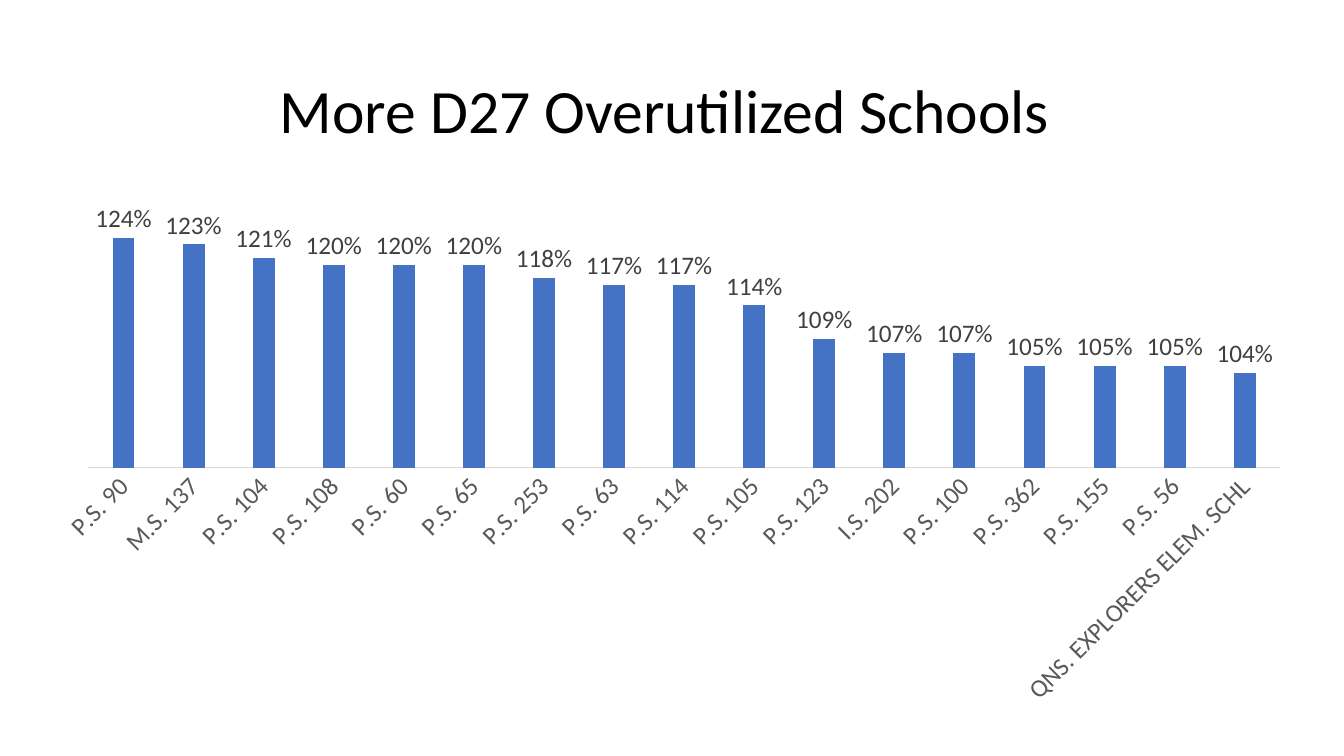
from pptx import Presentation
from pptx.chart.data import CategoryChartData
from pptx.dml.color import RGBColor
from pptx.enum.chart import XL_CHART_TYPE as ChartType
from pptx.enum.chart import XL_LABEL_POSITION as LabelPos
from pptx.enum.chart import XL_TICK_MARK as Tick
from pptx.enum.text import MSO_ANCHOR, PP_ALIGN
from pptx.oxml.ns import qn
from pptx.util import Inches, Pt

FONT = "Calibri"
SLIDE_W, SLIDE_H = 13.33, 7.5
SCHOOLS = [
    ("P.S. 90", 1.24), ("M.S. 137", 1.23), ("P.S. 104", 1.21),
    ("P.S. 108", 1.20), ("P.S. 60", 1.20), ("P.S. 65", 1.20),
    ("P.S. 253", 1.18), ("P.S. 63", 1.17), ("P.S. 114", 1.17),
    ("P.S. 105", 1.14), ("P.S. 123", 1.09), ("I.S. 202", 1.07),
    ("P.S. 100", 1.07), ("P.S. 362", 1.05), ("P.S. 155", 1.05),
    ("P.S. 56", 1.05), ("QNS. EXPLORERS ELEM. SCHL", 1.04),
]


def rgb(value):
    return RGBColor.from_string(value)


def centered_box(top, width, height):
    """Box of the given size, centered across the slide."""
    return [Inches(n) for n in ((SLIDE_W - width) / 2, top, width, height)]


def set_font(font, size, color):
    font.name = FONT
    font.size = Pt(size)
    font.bold = False
    font.color.rgb = rgb(color)


def add_title(slide, box, text):
    title = slide.shapes.title
    title.left, title.top, title.width, title.height = box
    tf = title.text_frame
    tf.vertical_anchor = MSO_ANCHOR.MIDDLE
    p = tf.paragraphs[0]
    p.alignment = PP_ALIGN.CENTER
    p.line_spacing = 0.9
    r = p.add_run()
    r.text = text
    set_font(r.font, 44, "000000")


def add_utilization_chart(slide, box):
    data = CategoryChartData(number_format="0%")
    data.categories = [school for school, _ in SCHOOLS]
    data.add_series("Series 1", [share for _, share in SCHOOLS])
    chart = slide.shapes.add_chart(ChartType.COLUMN_CLUSTERED, *box, data).chart
    chart.has_legend = False
    chart.has_title = False
    set_font(chart.font, 10, "000000")

    values = chart.value_axis
    values.minimum_scale, values.maximum_scale = 0.9, 1.3
    values.has_major_gridlines = False
    values.tick_labels.number_format = "0%"
    values.tick_labels.number_format_is_linked = False
    values.visible = False

    schools = chart.category_axis
    schools.major_tick_mark = schools.minor_tick_mark = Tick.NONE
    schools.format.line.color.rgb = rgb("D9D9D9")
    schools.format.line.width = Pt(0.75)
    set_font(schools.tick_labels.font, 18, "595959")
    body = schools._element.find(qn("c:txPr")).find(qn("a:bodyPr"))
    body.set("rot", "-2700000")
    body.set("vert", "horz")

    plot = chart.plots[0]
    plot.gap_width, plot.overlap = 219, -27
    plot.vary_by_categories = False
    fill = plot.series[0].format.fill
    fill.solid()
    fill.fore_color.rgb = rgb("4472C4")
    labels = plot.series[0].data_labels
    labels.show_value = True
    labels.position = LabelPos.OUTSIDE_END
    labels.number_format = "0%"
    labels.number_format_is_linked = False
    set_font(labels.font, 18, "404040")


def main():
    prs = Presentation()
    prs.slide_width, prs.slide_height = Inches(SLIDE_W), Inches(SLIDE_H)
    slide = prs.slides.add_slide(prs.slide_layouts[5])
    add_title(slide, centered_box(0.4, 11.5, 1.45), "More D27 Overutilized Schools ")
    add_utilization_chart(slide, centered_box(1.85, 12.56, 5.25))
    prs.save("out.pptx")


if __name__ == "__main__":
    main()
